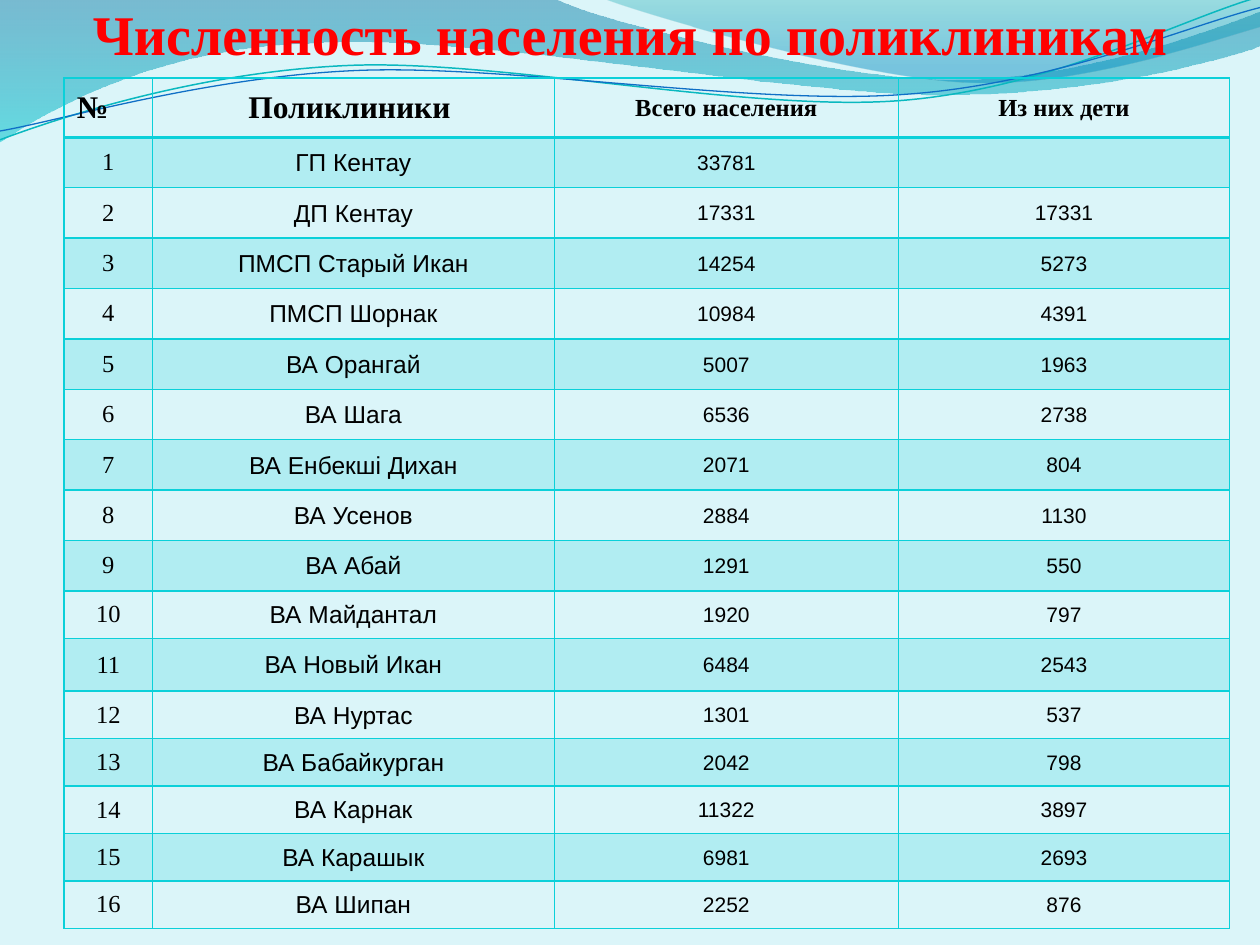
from lxml import etree
from pptx import Presentation
from pptx import util as u
from pptx.dml import color
from pptx.enum import text
from pptx.oxml import ns

AQUA = "0BD0D9"
SERIF, SANS = "Times New Roman", "Arial"
MID, LEFT = text.PP_ALIGN.CENTER, text.PP_ALIGN.LEFT


def rgb(code):
    return color.RGBColor.from_string(code)


def write(par, words, face, size, bold=False, tint="000000", side=MID):
    par.alignment = side
    run = par.add_run()
    run.text = words
    font = run.font
    font.name, font.size, font.bold = face, u.Pt(size), bold
    font.color.rgb = rgb(tint)
    return run


prs = Presentation()
prs.slide_width, prs.slide_height = u.Inches(10), u.Inches(7.5)
slide = prs.slides.add_slide(prs.slide_layouts[6])
slide.background.fill.solid()
slide.background.fill.fore_color.rgb = rgb("DBF5F9")

# Waves: pairs are straight steps, sixes are Bezier curves
# Each one: start, steps, gradient stops (place, colour, opacity), line
waves = [
    ((0, 0), [(4.4, -0.01), (4.76, 0.17, 6.64, 0.63, 7.58, 0.63),
              (8.53, 0.63, 9.58, 0.26, 10, 0.09), (10.01, 0.36),
              (9.83, 0.44, 8.7, 0.76, 7.46, 0.75),
              (6.22, 0.75, 3.82, 0.28, 2.57, 0.34),
              (1.29, 0.36, 0.46, 0.83, -0.01, 1.13), (0, 0)],
     [(0, "0074A1", 45), (1, "00C6CF", 55)], None),
    ((4.79, -0.01), [(5.09, 0.11, 6.82, 0.62, 7.69, 0.65),
                     (8.56, 0.69, 9.61, 0.32, 10, 0.21), (10, 0), (4.79, -0.01)],
     [(0, "00A1A9", 30), (0.8, "008BBF", 45)], None),
    ((0, 1.11), [(0.48, 0.93, 1.58, 0.57, 2.77, 0.52),
                 (3.95, 0.47, 5.93, 0.89, 7.13, 0.8),
                 (8.33, 0.71, 9.38, 0.15, 9.98, -0.02)],
     None, ("0AB8BF", 0.85)),
    ((0, 1.04), [(0.47, 0.96, 1.64, 0.61, 2.83, 0.56),
                 (4.03, 0.51, 5.97, 0.84, 7.17, 0.75),
                 (8.36, 0.67, 9.41, 0.21, 10, 0.06)],
     None, ("0F6FC6", 0.75)),
]
for start, steps, stops, line in waves:
    pen = slide.shapes.build_freeform(u.Inches(start[0]), u.Inches(start[1]))
    ends = [(u.Inches(step[-2]), u.Inches(step[-1])) for step in steps]
    pen.add_line_segments(ends, close=stops is not None)
    wave = pen.convert_to_shape()
    wave.shadow.inherit = False
    # Bend the straight steps that have control points
    legs = list(wave.element.iter(ns.qn("a:lnTo")))
    for leg, step in zip(legs, steps):
        if len(step) == 6:
            bend = etree.Element(ns.qn("a:cubicBezTo"))
            for x, y in zip(step[::2], step[1::2]):
                etree.SubElement(bend, ns.qn("a:pt"), x=str(u.Inches(x) - wave.left),
                                 y=str(u.Inches(y) - wave.top))
            leg.getparent().replace(leg, bend)
    if stops:
        wave.line.fill.background()
        wave.fill.gradient()
        wave.fill.gradient_angle = 270
        for stop, (place, tint, clear) in zip(wave.fill.gradient_stops, stops):
            stop.position = place
            stop.color.rgb = rgb(tint)
        for node, (place, tint, clear) in zip(wave.element.iter(ns.qn("a:srgbClr")), stops):
            etree.SubElement(node, ns.qn("a:alpha"), val=str(clear * 1000))
    else:
        wave.fill.background()
        wave.line.color.rgb = rgb(line[0])
        wave.line.width = u.Pt(line[1])

# Title with a thin text outline
box = slide.shapes.add_textbox(u.Inches(0.2), 0, u.Inches(9.61), u.Inches(0.53))
frame = box.text_frame
frame.word_wrap = True
frame.vertical_anchor = text.MSO_ANCHOR.BOTTOM
frame.margin_left = frame.margin_right = frame.margin_bottom = 0
run = write(frame.paragraphs[0], "Численность населения по поликлиникам", SERIF, 32, True, "FF0000")
edge = etree.Element(ns.qn("a:ln"), w=str(u.Pt(0.83)))
paint = etree.SubElement(edge, ns.qn("a:solidFill"))
etree.SubElement(paint, ns.qn("a:srgbClr"), val="0669C4")
run.font._element.insert(0, edge)

# Table data
heads = [("№", 18, LEFT), ("Поликлиники ", 18, MID),
         ("Всего населения", 14, MID), ("Из них дети", 14, MID)]
rows = [
    ("ГП Кентау", "33781", ""), ("ДП Кентау", "17331", "17331"),
    ("ПМСП Старый Икан", "14254", "5273"), ("ПМСП Шорнак", "10984", "4391"),
    ("ВА Орангай", "5007", "1963"), ("ВА Шага", "6536", "2738"),
    ("ВА Енбекші Дихан", "2071", "804"), ("ВА Усенов", "2884", "1130"),
    ("ВА Абай", "1291", "550"), ("ВА Майдантал", "1920", "797"),
    ("ВА Новый Икан", "6484", "2543"), ("ВА Нуртас", "1301", "537"),
    ("ВА Бабайкурган", "2042", "798"), ("ВА Карнак", "11322", "3897"),
    ("ВА Карашык", "6981", "2693"), ("ВА Шипан", "2252", "876"),
]
wide = [0.7, 3.19, 2.73, 2.63]
low = (6.75 - 0.47 - 9 * 0.4 - 0.42) / 6
tall = [0.47] + [0.4] * 9 + [low, 0.42] + [low] * 5
looks = [(SERIF, 14), (SANS, 14), (SANS, 12), (SANS, 12)]

table = slide.shapes.add_table(len(tall), len(wide), u.Inches(0.51), u.Inches(0.62),
                               u.Inches(sum(wide)), u.Inches(sum(tall))).table
for col, w in zip(table.columns, wide):
    col.width = u.Inches(w)
for row, h in zip(table.rows, tall):
    row.height = u.Inches(h)

# Cells: text, banded fill, borders
for r in range(len(tall)):
    for c in range(len(wide)):
        cell = table.cell(r, c)
        cell.vertical_anchor = text.MSO_ANCHOR.MIDDLE
        par = cell.text_frame.paragraphs[0]
        if r == 0:
            words, size, side = heads[c]
            write(par, words, SERIF, size, True, side=side)
        else:
            words = (str(r), *rows[r - 1])[c]
            if c:
                cell.margin_left = cell.margin_right = cell.margin_top = u.Inches(0.01)
                cell.margin_bottom = 0
            if words:
                write(par, words, *looks[c])
        props = cell._tc.get_or_add_tcPr()
        if r % 2:
            cell.fill.solid()
            cell.fill.fore_color.rgb = rgb(AQUA)
            tint = next(props.iter(ns.qn("a:srgbClr")))
            etree.SubElement(tint, ns.qn("a:alpha"), val="20000")
        else:
            cell.fill.background()
        for i, name in enumerate(("lnL", "lnR", "lnT", "lnB")):
            thick = (r, name) in ((0, "lnB"), (1, "lnT"))
            edge = etree.Element(ns.qn("a:" + name), w=str(u.Pt(2 if thick else 1)))
            paint = etree.SubElement(edge, ns.qn("a:solidFill"))
            etree.SubElement(paint, ns.qn("a:srgbClr"), val=AQUA)
            props.insert(i, edge)

prs.save("out.pptx")
